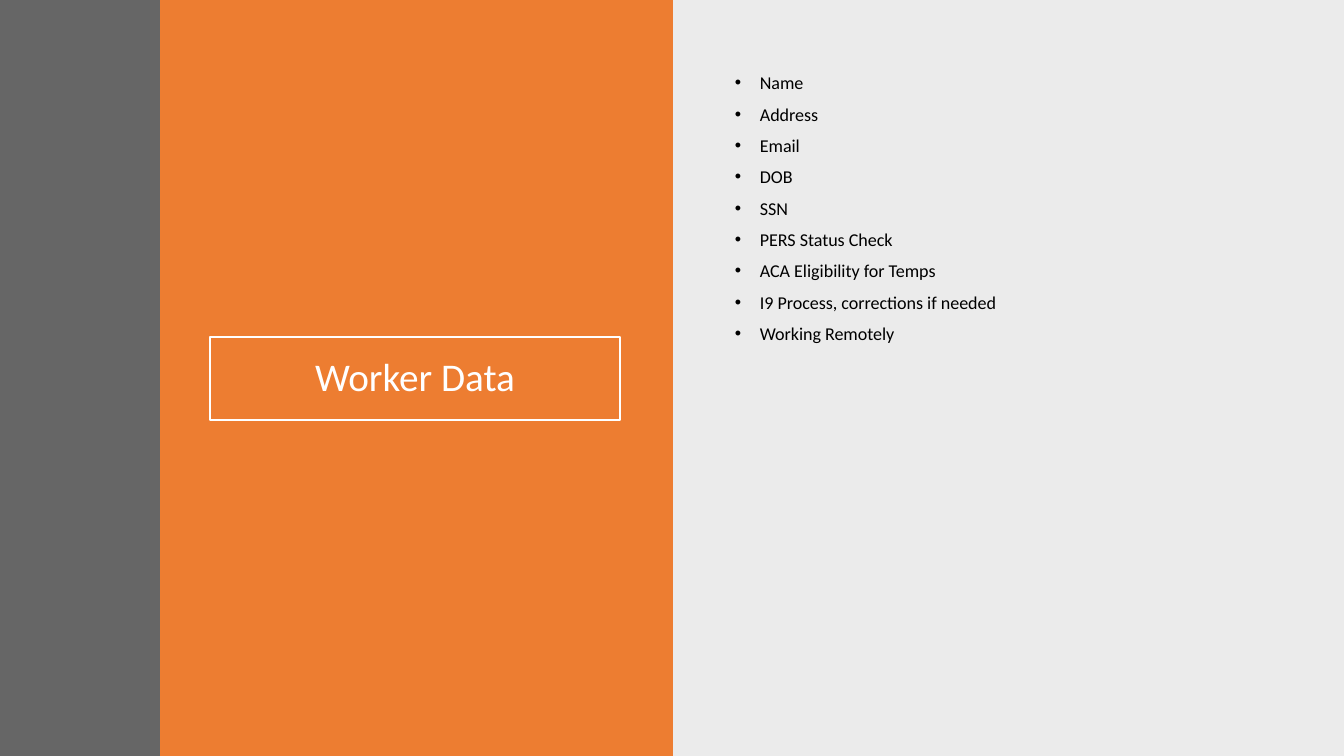
"""Build the Worker Data slide: colour panels, a framed title and a bullet list."""
from lxml import etree
from pptx import Presentation
from pptx.dml.color import RGBColor
from pptx.enum.shapes import MSO_SHAPE
from pptx.enum.text import MSO_ANCHOR, PP_ALIGN
from pptx.oxml.ns import qn
from pptx.util import Pt

RECTANGLE = MSO_SHAPE.RECTANGLE
MIDDLE, TOP = MSO_ANCHOR.MIDDLE, MSO_ANCHOR.TOP
CENTER, LEFT = PP_ALIGN.CENTER, PP_ALIGN.LEFT

PX = 914400 / 100.8
THEME = {
    "font": "Calibri",
    "title_size": 28,
    "list_size": 12.9,
    "shade": "000000",
    "accent": "ED7D31",
    "band": "404040",
    "light": "FFFFFF",
    "dark": "000000",
}
WORKER_FIELDS = [
    "Name",
    "Address",
    "Email",
    "DOB",
    "SSN",
    "PERS Status Check",
    "ACA Eligibility for Temps",
    "I9 Process, corrections if needed",
    "Working Remotely",
]


def px(*lengths):
    return [round(length * PX) for length in lengths]


def write(frame, lines, size, color, align=LEFT, anchor=TOP, spacing=1.0, before=0, bullet=None):
    frame.word_wrap = True
    frame.vertical_anchor = anchor
    for index, line in enumerate(lines):
        paragraph = frame.paragraphs[0] if index == 0 else frame.add_paragraph()
        paragraph.alignment = align
        paragraph.line_spacing = spacing
        paragraph.space_before = Pt(before)
        run = paragraph.add_run()
        run.text = line
        run.font.name = THEME["font"]
        run.font.size = Pt(size)
        run.font.color.rgb = RGBColor.from_string(color)
        if bullet:
            properties = paragraph._p.get_or_add_pPr()
            indent = px(25)[0]
            properties.set("marL", str(indent))
            properties.set("indent", str(-indent))
            etree.SubElement(properties, qn("a:buFont")).set("typeface", "Arial")
            etree.SubElement(properties, qn("a:buChar")).set("char", bullet)


prs = Presentation()
prs.slide_width, prs.slide_height = px(1344, 756)
slide = prs.slides.add_slide(prs.slide_layouts[6])

panels = [
    (672, 672, THEME["shade"], 8),
    (160, 513, THEME["accent"], 100),
    (0, 160, THEME["band"], 80),
]
for left, width, color, opacity in panels:
    panel = slide.shapes.add_shape(RECTANGLE, *px(left, 0, width, 756))
    panel.shadow.inherit = False
    panel.line.fill.background()
    panel.fill.solid()
    panel.fill.fore_color.rgb = RGBColor.from_string(color)
    if opacity < 100:
        tint = panel._element.spPr.find(".//" + qn("a:srgbClr"))
        etree.SubElement(tint, qn("a:alpha")).set("val", str(opacity * 1000))

title = slide.shapes.add_shape(RECTANGLE, *px(210, 337, 410, 83))
title.shadow.inherit = False
title.fill.background()
title.line.color.rgb = RGBColor.from_string(THEME["light"])
title.line.width = Pt(2)
write(title.text_frame, ["Worker Data"], THEME["title_size"], THEME["light"],
      align=CENTER, anchor=MIDDLE, spacing=0.9)

field_list = slide.shapes.add_textbox(*px(725, 71, 557, 281))
write(field_list.text_frame, WORKER_FIELDS, THEME["list_size"], THEME["dark"],
      spacing=0.8, before=10, bullet="•")

prs.save("out.pptx")
